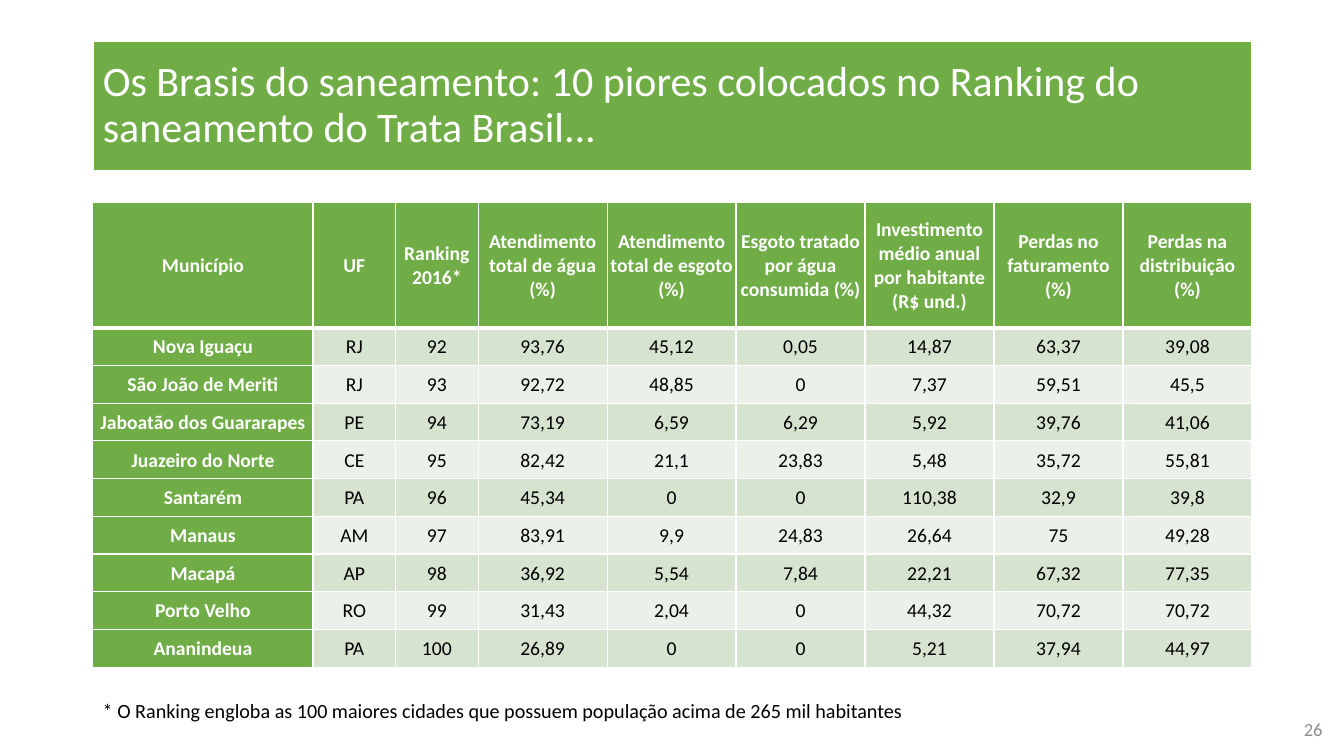
from dataclasses import dataclass

from lxml import etree
from pptx import Presentation
from pptx.dml.color import RGBColor
from pptx.enum.text import MSO_ANCHOR, MSO_AUTO_SIZE, PP_ALIGN
from pptx.oxml.ns import qn
from pptx.util import Cm, Pt

MIDDLE, TOP = MSO_ANCHOR.MIDDLE, MSO_ANCHOR.TOP
LEFT, CENTER, RIGHT = PP_ALIGN.LEFT, PP_ALIGN.CENTER, PP_ALIGN.RIGHT
NO_AUTOFIT = MSO_AUTO_SIZE.NONE
TITLE_ONLY = 5


@dataclass(frozen=True)
class Theme:
    font: str = "Calibri"
    green: str = "70AD47"
    bands: tuple = ("D5E3CF", "EBF1E9")
    white: str = "FFFFFF"
    black: str = "000000"
    gray: str = "8C8C8C"
    title_size: float = 30
    table_size: float = 14
    note_size: float = 14.4
    number_size: float = 13.2


THEME = Theme()

TITLE = ("Os Brasis do saneamento: 10 piores colocados no Ranking do "
         "saneamento do Trata Brasil...")
FOOTNOTE = ("* O Ranking engloba as 100 maiores cidades que possuem "
            "população acima de 265 mil habitantes")
HEADINGS = (
    "Município", "UF", "Ranking 2016*", "Atendimento total de água (%)",
    "Atendimento total de esgoto (%)", "Esgoto tratado por água consumida (%)",
    "Investimento médio anual por habitante (R$ und.)",
    "Perdas no faturamento (%)", "Perdas na distribuição (%)",
)
CITIES = (
    ("Nova Iguaçu", "RJ", "92", "93,76", "45,12", "0,05", "14,87", "63,37", "39,08"),
    ("São João de Meriti", "RJ", "93", "92,72", "48,85", "0", "7,37", "59,51", "45,5"),
    ("Jaboatão dos Guararapes", "PE", "94", "73,19", "6,59", "6,29", "5,92", "39,76", "41,06"),
    ("Juazeiro do Norte", "CE", "95", "82,42", "21,1", "23,83", "5,48", "35,72", "55,81"),
    ("Santarém", "PA", "96", "45,34", "0", "0", "110,38", "32,9", "39,8"),
    ("Manaus", "AM", "97", "83,91", "9,9", "24,83", "26,64", "75", "49,28"),
    ("Macapá", "AP", "98", "36,92", "5,54", "7,84", "22,21", "67,32", "77,35"),
    ("Porto Velho", "RO", "99", "31,43", "2,04", "0", "44,32", "70,72", "70,72"),
    ("Ananindeua", "PA", "100", "26,89", "0", "0", "5,21", "37,94", "44,97"),
)

# Lengths in centimetres
MARGIN_LEFT, CONTENT_WIDTH = 2.34, 29.21
COLUMN_WIDTHS = (5.55, 2.08, 2.08) + (3.25,) * 6
HEADER_HEIGHT, CITY_HEIGHT = 3.16, 0.95


def write(frame, text, size, color, align=LEFT, bold=False, spacing=None):
    paragraph = frame.paragraphs[0]
    paragraph.alignment = align
    if spacing:
        paragraph.line_spacing = spacing
    run = paragraph.add_run()
    run.text = text
    run.font.name = THEME.font
    run.font.size = Pt(size)
    run.font.bold = bold
    run.font.color.rgb = RGBColor.from_string(color)


def set_frame(frame, anchor):
    frame.word_wrap = True
    frame.auto_size = NO_AUTOFIT
    frame.vertical_anchor = anchor
    frame.margin_left = frame.margin_right = Cm(0.25)
    frame.margin_top = frame.margin_bottom = Cm(0.13)


def fill_title(title):
    title.left, title.top = Cm(MARGIN_LEFT), Cm(1.02)
    title.width, title.height = Cm(CONTENT_WIDTH), Cm(3.3)
    title.fill.solid()
    title.fill.fore_color.rgb = RGBColor.from_string(THEME.green)
    title.line.color.rgb = RGBColor.from_string(THEME.white)
    title.line.width = Pt(1.5)
    set_frame(title.text_frame, MIDDLE)
    write(title.text_frame, TITLE, THEME.title_size, THEME.white, spacing=0.9)


def add_text(slide, left, top, width, height, anchor, *text, **style):
    box = slide.shapes.add_textbox(Cm(left), Cm(top), Cm(width), Cm(height))
    set_frame(box.text_frame, anchor)
    write(box.text_frame, *text, **style)


def set_borders(cell, widths):
    """Draw white borders; widths are points for left, right, top, bottom."""
    properties = cell._tc.get_or_add_tcPr()
    for position, (side, width) in enumerate(zip("LRTB", widths)):
        border = etree.Element(qn(f"a:ln{side}"), w=str(Pt(width)))
        fill = etree.SubElement(border, qn("a:solidFill"))
        etree.SubElement(fill, qn("a:srgbClr"), val=THEME.white)
        properties.insert(position, border)


def fill_cell(cell, text, row, column):
    is_label = row == 0 or column == 0
    cell.fill.solid()
    fill = THEME.green if is_label else THEME.bands[(row - 1) % 2]
    cell.fill.fore_color.rgb = RGBColor.from_string(fill)
    cell.vertical_anchor = MIDDLE
    cell.margin_left = cell.margin_right = cell.margin_top = Cm(0.03)
    cell.margin_bottom = 0
    write(cell.text_frame, text, THEME.table_size,
          THEME.white if is_label else THEME.black, CENTER, is_label)
    # A thick rule separates the headings from the cities
    set_borders(cell, (1, 1, 3 if row == 1 else 1, 3 if row == 0 else 1))


def add_ranking(slide):
    rows = (HEADINGS,) + CITIES
    table_height = HEADER_HEIGHT + CITY_HEIGHT * len(CITIES)
    ranking = slide.shapes.add_table(
        len(rows), len(HEADINGS), Cm(MARGIN_LEFT), Cm(5.1),
        Cm(CONTENT_WIDTH), Cm(table_height)).table
    ranking.first_col = True
    ranking.horz_banding = False
    for column, width in zip(ranking.columns, COLUMN_WIDTHS):
        column.width = Cm(width)
    for r, values in enumerate(rows):
        ranking.rows[r].height = Cm(CITY_HEIGHT if r else HEADER_HEIGHT)
        for c, value in enumerate(values):
            fill_cell(ranking.cell(r, c), value, r, c)


def main():
    deck = Presentation()
    deck.slide_width, deck.slide_height = Cm(33.87), Cm(19.05)
    slide = deck.slides.add_slide(deck.slide_layouts[TITLE_ONLY])

    # Title band and ranking table
    fill_title(slide.shapes.title)
    add_ranking(slide)

    # Slide number and footnote
    add_text(slide, 31.93, 17.86, 1.65, 1.02, MIDDLE,
             "26", THEME.number_size, THEME.gray, align=RIGHT)
    add_text(slide, MARGIN_LEFT, 17.53, 24.49, 0.97, TOP,
             FOOTNOTE, THEME.note_size, THEME.black, spacing=0.9)

    deck.save("out.pptx")


if __name__ == "__main__":
    main()
